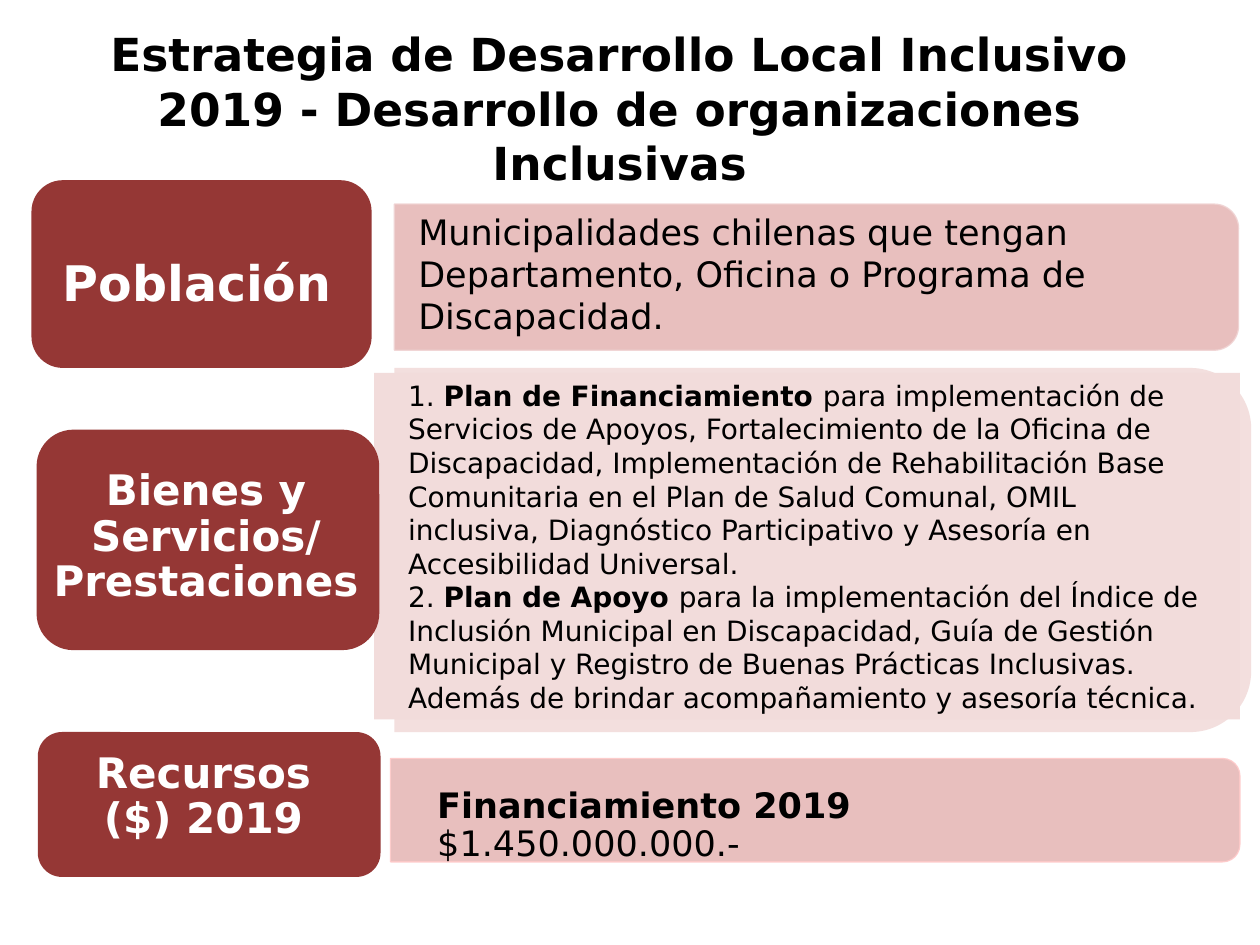
from dataclasses import dataclass
from typing import NamedTuple, Optional

from lxml import etree
from pptx import Presentation
from pptx.dml.color import RGBColor
from pptx.enum.shapes import MSO_SHAPE
from pptx.enum.text import MSO_ANCHOR, PP_ALIGN
from pptx.oxml.ns import qn
from pptx.util import Inches, Pt

ROUND = MSO_SHAPE.ROUNDED_RECTANGLE
TAB = MSO_SHAPE.ROUND_2_SAME_RECTANGLE
RECT = MSO_SHAPE.RECTANGLE
MIDDLE = MSO_ANCHOR.MIDDLE
TOP = MSO_ANCHOR.TOP
LEFT = PP_ALIGN.LEFT
CENTER = PP_ALIGN.CENTER


@dataclass(frozen=True)
class Theme:
    font: str = "DejaVu Sans"
    black: str = "000000"
    white: str = "FFFFFF"
    red: str = "953735"
    rose: str = "E6B9B8"
    pale: str = "F2DCDB"
    edge: str = "F0D3D3"
    glow: str = "FEC9C9"
    title: int = 26
    head: int = 28
    label: int = 24
    body: int = 20
    small: int = 16
    corner: float = 0.167
    opaque: int = 90


THEME = Theme()


class Box(NamedTuple):
    left: float
    top: float
    width: float
    height: float


class Run(NamedTuple):
    text: str
    bold: bool = False


@dataclass(frozen=True)
class Text:
    box: Box
    paras: list[list[Run]]
    size: int
    color: str = THEME.black
    align: PP_ALIGN = LEFT
    anchor: MSO_ANCHOR = MIDDLE
    inset: tuple[float, float] = (0.27, 0.14)
    space: float = 1.0
    fill: Optional[str] = None


@dataclass(frozen=True)
class Row:
    panel: Box
    tint: str
    edge: Optional[str]
    body: Text
    tile: Box
    label: Text


def fade(fill) -> None:
    for color in fill.iter(qn("a:srgbClr")):
        alpha = etree.SubElement(color, qn("a:alpha"))
        alpha.set("val", str(THEME.opaque * 1000))


def add_shape(slide, kind: MSO_SHAPE, box: Box, fill: str):
    shape = slide.shapes.add_shape(kind, *map(Inches, box))
    shape.shadow.inherit = False
    shape.fill.solid()
    shape.fill.fore_color.rgb = RGBColor.from_string(fill)
    shape.line.fill.background()
    return shape


def add_panel(slide, box: Box, tint: str, edge: Optional[str]) -> None:
    shift = (box.width - box.height) / 2
    frame = Box(box.left + shift, box.top - shift, box.height, box.width)
    shape = add_shape(slide, TAB, frame, tint)
    shape.rotation = 90
    shape.adjustments[0] = THEME.corner
    shape.adjustments[1] = 0
    if edge:
        shape.line.color.rgb = RGBColor.from_string(edge)
        shape.line.width = Pt(0.75)
    fade(shape.element.spPr)


def add_text(slide, text: Text) -> None:
    if text.fill:
        shape = add_shape(slide, RECT, text.box, text.fill)
    else:
        shape = slide.shapes.add_textbox(*map(Inches, text.box))
    frame = shape.text_frame
    frame.word_wrap = True
    frame.vertical_anchor = text.anchor
    frame.margin_left = frame.margin_right = Inches(text.inset[0])
    frame.margin_top = frame.margin_bottom = Inches(text.inset[1])
    for i, runs in enumerate(text.paras):
        para = frame.paragraphs[0] if i == 0 else frame.add_paragraph()
        para.alignment = text.align
        para.line_spacing = text.space
        for item in runs:
            run = para.add_run()
            run.text = item.text
            run.font.name = THEME.font
            run.font.size = Pt(text.size)
            run.font.bold = item.bold
            run.font.color.rgb = RGBColor.from_string(text.color)


def add_row(slide, row: Row) -> None:
    add_panel(slide, row.panel, row.tint, row.edge)
    add_text(slide, row.body)
    tile = add_shape(slide, ROUND, row.tile, THEME.red)
    tile.adjustments[0] = THEME.corner
    add_text(slide, row.label)


def label(box: Box, lines: list[str], size: int = THEME.label,
          inset: tuple[float, float] = (0.1, 0.05)) -> Text:
    return Text(box, [[Run(line, True)] for line in lines], size,
                THEME.white, CENTER, inset=inset, space=0.9)


TITLE = Text(
    Box(0.39, 0.16, 9.06, 1.41),
    [[Run("Estrategia de Desarrollo Local Inclusivo 2019 - "
          "Desarrollo de organizaciones Inclusivas", True)]],
    THEME.title, align=CENTER, anchor=TOP, inset=(0.1, 0.05))

ROWS = [
    Row(Box(3.13, 1.62, 6.7, 1.16), THEME.rose, THEME.edge,
        Text(Box(3.05, 1.67, 6.64, 1),
             [[Run("Municipalidades chilenas que tengan Departamento, "
                   "Oficina o Programa de Discapacidad.")]], THEME.body),
        Box(0.25, 1.43, 2.7, 1.49),
        label(Box(0.25, 1.6, 2.63, 1.34), ["Población"],
              THEME.head, (0.13, 0.07))),
    Row(Box(3.13, 2.92, 6.8, 2.89), THEME.pale, None,
        Text(Box(2.97, 2.96, 6.87, 2.75),
             [[Run("1. "), Run("Plan de Financiamiento ", True),
               Run("para implementación de Servicios de Apoyos, "
                   "Fortalecimiento de la Oficina de Discapacidad, "
                   "Implementación de Rehabilitación Base Comunitaria en el "
                   "Plan de Salud Comunal, OMIL inclusiva, Diagnóstico "
                   "Participativo y Asesoría en Accesibilidad Universal.")],
              [Run("2. "), Run("Plan de Apoyo ", True),
               Run("para la implementación del Índice de Inclusión Municipal "
                   "en Discapacidad, Guía de Gestión Municipal y Registro de "
                   "Buenas Prácticas Inclusivas. Además de brindar "
                   "acompañamiento y asesoría técnica.")]],
             THEME.small, fill=THEME.pale),
        Box(0.29, 3.41, 2.72, 1.75),
        label(Box(0.31, 3.44, 2.65, 1.65),
              ["Bienes y Servicios/", "Prestaciones"])),
    Row(Box(3.1, 6.02, 6.74, 0.82), THEME.rose, THEME.glow,
        Text(Box(3.2, 6.27, 6.48, 0.57),
             [[Run("Financiamiento 2019", True)], [Run("$1.450.000.000.-")]],
             THEME.body, space=0.9),
        Box(0.3, 5.81, 2.72, 1.15),
        label(Box(0.35, 5.81, 2.53, 1.04), ["Recursos ($) 2019"])),
]


def main() -> None:
    deck = Presentation()
    deck.slide_width, deck.slide_height = Inches(10), Inches(7.5)
    slide = deck.slides.add_slide(deck.slide_layouts[6])
    add_text(slide, TITLE)
    for row in ROWS:
        add_row(slide, row)
    deck.save("out.pptx")


if __name__ == "__main__":
    main()
